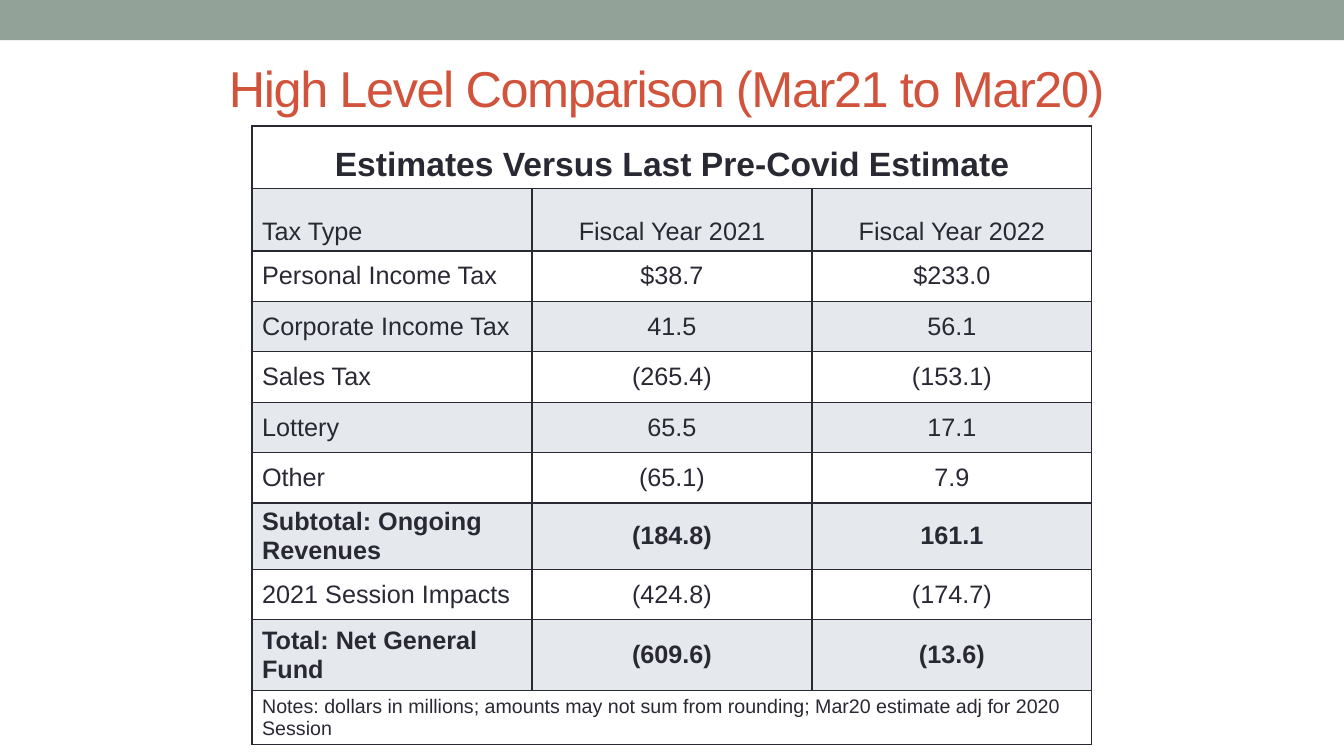
from lxml import etree
from pptx import Presentation
from pptx.dml.color import RGBColor
from pptx.enum.shapes import MSO_SHAPE
from pptx.enum.text import MSO_ANCHOR, PP_ALIGN
from pptx.oxml.ns import qn
from pptx.util import Inches, Pt

LEFT, CENTER = PP_ALIGN.LEFT, PP_ALIGN.CENTER
MIDDLE, BOTTOM = MSO_ANCHOR.MIDDLE, MSO_ANCHOR.BOTTOM
SAGE = RGBColor(0x93, 0xA2, 0x99)
RUST = RGBColor(0xD2, 0x53, 0x3C)
INK = RGBColor(0x29, 0x29, 0x34)
SLATE = RGBColor(0x80, 0x8D, 0xA0)
FONT = "Arial"

HEADING = "Estimates Versus Last Pre-Covid Estimate"
NOTES = ("Notes: dollars in millions; amounts may not sum from rounding; "
         "Mar20 estimate adj for 2020 Session")
ROWS = [
    (0.62, [HEADING, "", ""]),
    (0.62, ["Tax Type", "Fiscal Year 2021", "Fiscal Year 2022"]),
    (0.5, ["Personal Income Tax", "$38.7", "$233.0"]),
    (0.5, ["Corporate Income Tax", "41.5", "56.1"]),
    (0.5, ["Sales Tax", "(265.4)", "(153.1)"]),
    (0.5, ["Lottery", "65.5", "17.1"]),
    (0.5, ["Other", "(65.1)", "7.9"]),
    (0.62, ["Subtotal: Ongoing Revenues", "(184.8)", "161.1"]),
    (0.5, ["2021 Session Impacts", "(424.8)", "(174.7)"]),
    (0.7, ["Total: Net General Fund", "(609.6)", "(13.6)"]),
    (0.4, [NOTES, "", ""]),
]
LAST = len(ROWS) - 1
SIZES = {0: 24, LAST: 14}
BOLD_ROWS = (0, 7, 9)


def write(frame, text, align, **font_format):
    para = frame.paragraphs[0]
    para.alignment = align
    span = para.add_run()
    span.text = text
    span.font.color.rgb = font_format.pop("color")
    for name, value in font_format.items():
        setattr(span.font, name, value)
    return span


def draw_borders(cell):
    properties = cell._tc.get_or_add_tcPr()
    for side in ("a:lnL", "a:lnR", "a:lnT", "a:lnB"):
        line = etree.SubElement(properties, qn(side), w=str(Pt(1)))
        fill = etree.SubElement(line, qn("a:solidFill"))
        etree.SubElement(fill, qn("a:srgbClr"), val=str(INK))


deck = Presentation()
deck.slide_width, deck.slide_height = Inches(13.33), Inches(7.5)
page = deck.slides.add_slide(deck.slide_layouts[5])

band = page.shapes.add_shape(MSO_SHAPE.RECTANGLE, 0, 0, deck.slide_width, Inches(0.4))
band.shadow.inherit = False
band.fill.solid()
band.fill.fore_color.rgb = SAGE
band.line.fill.background()

title = page.shapes.title
title.left, title.top = Inches(2.17), Inches(0.58)
title.width, title.height = Inches(9), Inches(0.58)
title.text_frame.vertical_anchor = MIDDLE
title_span = write(title.text_frame, "High Level Comparison (Mar21 to Mar20)", LEFT,
                   name=FONT, size=Pt(36), bold=False, color=RUST)
title_span.font._element.set("spc", "-100")

table = page.shapes.add_table(len(ROWS), 3, Inches(2.5), Inches(1.25),
                              Inches(8.33), Inches(5.96)).table
table.first_row = table.horz_banding = False
for column in table.columns:
    column.width = Inches(8.33 / 3)

for row, (height, texts) in enumerate(ROWS):
    table.rows[row].height = Inches(height)
    for column, text in enumerate(texts):
        cell = table.cell(row, column)
        cell.vertical_anchor = BOTTOM if row < 2 else MIDDLE
        draw_borders(cell)
        if row % 2:
            cell.fill.solid()
            cell.fill.fore_color.rgb = SLATE
            tint = cell._tc.tcPr.find(qn("a:solidFill"))[0]
            etree.SubElement(tint, qn("a:alpha"), val="20000")
        else:
            cell.fill.background()
        if text:
            write(cell.text_frame, text, CENTER if column or row == 0 else LEFT,
                  name=FONT, size=Pt(SIZES.get(row, 18)), bold=row in BOLD_ROWS, color=INK)

for row in (0, LAST):
    table.cell(row, 0).merge(table.cell(row, 2))

deck.save("out.pptx")
